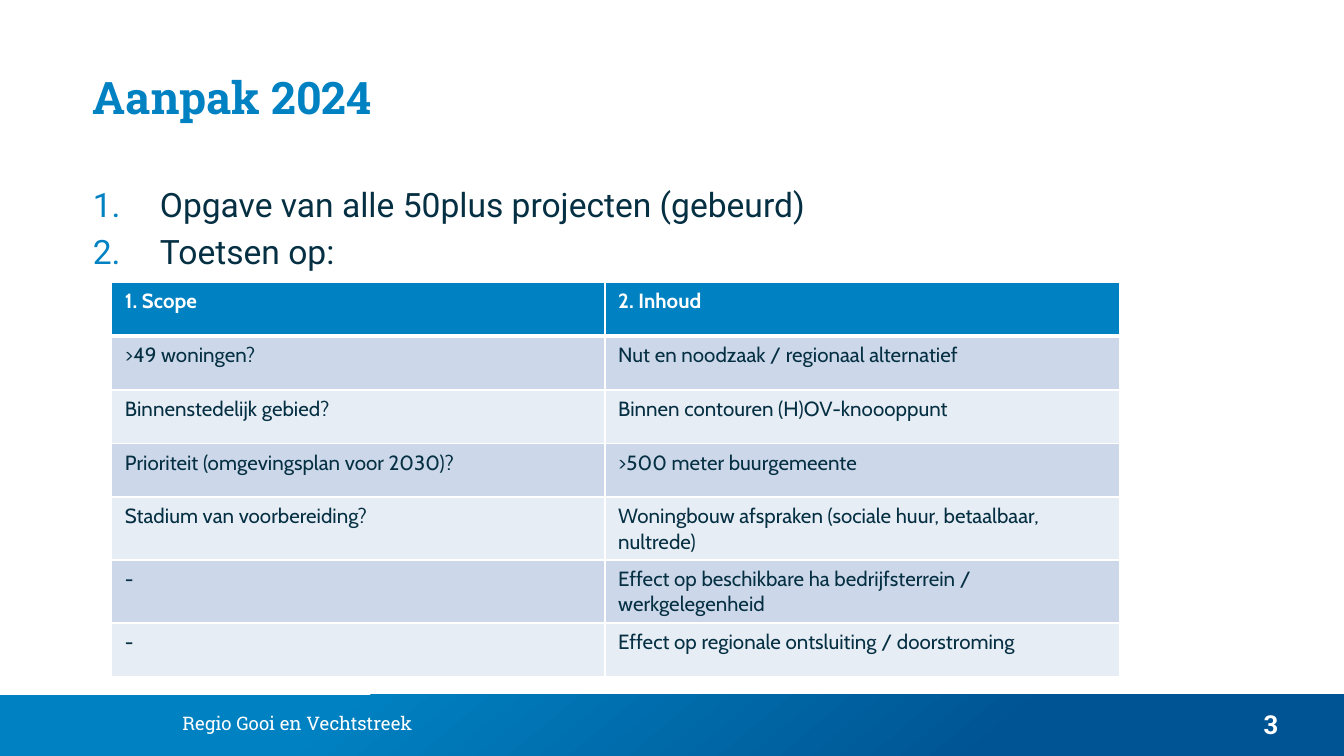
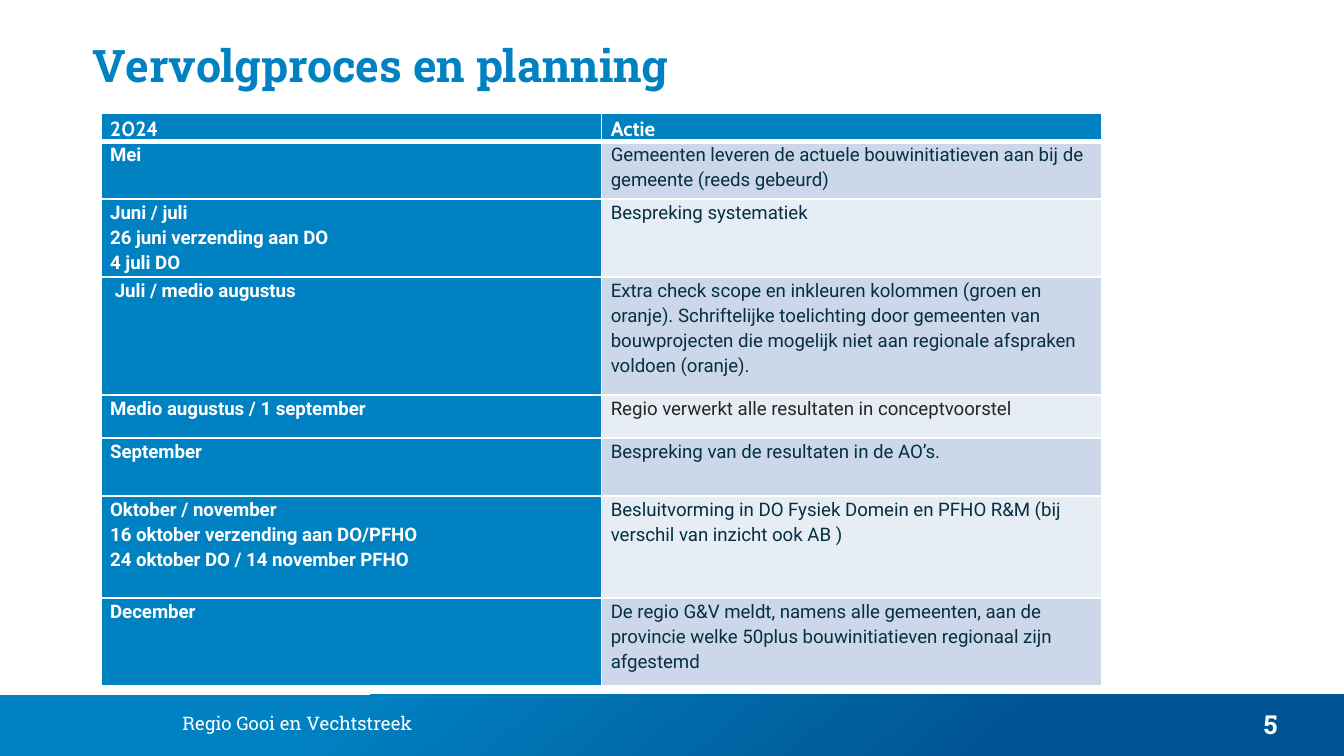
from lxml import etree
from pptx import Presentation
from pptx import util as u
from pptx.dml.color import RGBColor
from pptx.enum import shapes, text
from pptx.oxml import ns

BLUE = RGBColor(0x00, 0x82, 0xC2)
DEEP_BLUE = RGBColor(0x00, 0x54, 0x93)
INK = RGBColor(0x05, 0x2F, 0x42)
CHARCOAL = RGBColor(0x26, 0x26, 0x26)
WHITE = RGBColor(0xFF, 0xFF, 0xFF)
ROW_DARK = RGBColor(0xCC, 0xD8, 0xE9)
ROW_LIGHT = RGBColor(0xE7, 0xED, 0xF4)
SLAB, SANS, TABLE_FONT = "Roboto Slab", "Roboto", "Cabin"
TITLE_ONLY, TITLE_AND_BODY = 5, 1
PAGE_WIDTH = 10
PAGE_HEIGHT = PAGE_WIDTH * 9 / 16
BAND_TOP = 5.17

CRITERIA = [
    ("1. Scope", "2. Inhoud"),
    (">49 woningen?", "Nut en noodzaak / regionaal alternatief"),
    ("Binnenstedelijk gebied?", "Binnen contouren (H)OV-knoooppunt"),
    ("Prioriteit (omgevingsplan voor 2030)?", ">500 meter buurgemeente"),
    ("Stadium van voorbereiding?",
     "Woningbouw afspraken (sociale huur, betaalbaar, nultrede)"),
    ("-", "Effect op beschikbare ha bedrijfsterrein / werkgelegenheid"),
    ("-", "Effect op regionale ontsluiting / doorstroming"),
]
PLANNING = [
    ("2024", "Actie"),
    ("Mei", "Gemeenten leveren de actuele bouwinitiatieven aan bij de gemeente "
            "(reeds gebeurd)"),
    ("Juni / juli\n26 juni verzending aan DO\n4 juli DO", "Bespreking systematiek"),
    (" Juli / medio augustus",
     "Extra check scope en inkleuren kolommen (groen en oranje). Schriftelijke "
     "toelichting door gemeenten van bouwprojecten die mogelijk niet aan regionale "
     "afspraken voldoen (oranje)."),
    ("Medio augustus / 1 september", "Regio verwerkt alle resultaten in conceptvoorstel"),
    ("September", "Bespreking van de resultaten in de AO’s."),
    ("Oktober / november\n16 oktober verzending aan DO/PFHO\n"
     "24 oktober DO / 14 november PFHO",
     "Besluitvorming in DO Fysiek Domein en PFHO R&M (bij verschil van inzicht ook AB )"),
    ("December", "De regio G&V meldt, namens alle gemeenten, aan de provincie welke "
                 "50plus bouwinitiatieven regionaal zijn afgestemd"),
]


def inches(box):
    return [u.Inches(length) for length in box]


def write(frame, content, size, font=SANS, color=INK, bold=False,
          align=text.PP_ALIGN.LEFT, spacing=None, gap=0, numbered=False):
    frame.word_wrap = True
    frame.text = content
    for index, paragraph in enumerate(frame.paragraphs):
        paragraph.alignment = align
        paragraph.line_spacing = spacing
        paragraph.space_before = u.Pt(gap if index else 0)
        if numbered:
            number(paragraph)
        paragraph.font.size = u.Pt(size)
        paragraph.font.name = font
        paragraph.font.bold = bold
        paragraph.font.color.rgb = color


def number(paragraph):
    props = paragraph._p.get_or_add_pPr()
    props.set("marL", str(u.Inches(0.5)))
    props.set("indent", str(-u.Inches(0.5)))
    tint = etree.SubElement(props, ns.qn("a:buClr"))
    etree.SubElement(tint, ns.qn("a:srgbClr"), val=str(BLUE))
    etree.SubElement(props, ns.qn("a:buFont"), typeface="+mj-lt")
    etree.SubElement(props, ns.qn("a:buAutoNum"), type="arabicPeriod")


def fill_placeholder(placeholder, box, content, **style):
    placeholder.left, placeholder.top, placeholder.width, placeholder.height = inches(box)
    frame = placeholder.text_frame
    frame.auto_size = text.MSO_AUTO_SIZE.NONE
    frame.vertical_anchor = text.MSO_ANCHOR.TOP
    write(frame, content, **style)


def add_label(slide, box, content, **style):
    write(slide.shapes.add_textbox(*inches(box)).text_frame, content, **style)


def add_footer(slide, box, page):
    left, top, width, height = box
    band = slide.shapes.add_shape(shapes.MSO_SHAPE.RECTANGLE, *inches(box))
    band.shadow.inherit = False
    band.line.fill.background()
    band.fill.gradient()
    band.fill.gradient_angle = 310
    stops = ((0.24, BLUE), (0.75, DEEP_BLUE))
    for stop, (position, color) in zip(band.fill.gradient_stops, stops):
        stop.position = position
        stop.color.rgb = color
    add_label(slide, (left + width - 0.98, top + 0.05, 0.87, 0.35), page, size=14,
              font=SLAB, color=WHITE, bold=True, align=text.PP_ALIGN.CENTER)
    add_label(slide, (left + 1.26, top + 0.08, 3.07, 0.35), "Regio Gooi en Vechtstreek",
              size=10, font=SLAB, color=WHITE)


def add_borders(cell, row):
    props = cell._tc.get_or_add_tcPr()
    weights = {"L": 1, "R": 1, "T": 3 if row == 1 else 1, "B": 3 if row == 0 else 1}
    for side, weight in weights.items():
        edge = etree.SubElement(props, ns.qn("a:ln" + side), w=str(u.Pt(weight)))
        paint = etree.SubElement(edge, ns.qn("a:solidFill"))
        etree.SubElement(paint, ns.qn("a:srgbClr"), val=str(WHITE))


def add_grid(slide, corner, widths, heights, entries, size, font, margins=(0.1, 0.05),
             spacing=None, blue_column=False, tints=None):
    box = (*corner, sum(widths), sum(heights))
    grid = slide.shapes.add_table(len(heights), len(widths), *inches(box)).table
    for column, width in zip(grid.columns, widths):
        column.width = u.Inches(width)
    side, edge = inches(margins)
    for row, (height, labels) in enumerate(zip(heights, entries)):
        grid.rows[row].height = u.Inches(height)
        for col, label in enumerate(labels):
            cell = grid.cell(row, col)
            cell.margin_left = cell.margin_right = side
            cell.margin_top = cell.margin_bottom = edge
            heading = row == 0 or (blue_column and col == 0)
            color = WHITE if heading else (tints or {}).get((row, col), INK)
            write(cell.text_frame, label, size=size if row else 11,
                  font=font if row else TABLE_FONT, color=color,
                  bold=heading, spacing=spacing)
            add_borders(cell, row)
            cell.fill.solid()
            cell.fill.fore_color.rgb = BLUE if heading else ROW_DARK if row % 2 else ROW_LIGHT


def start_slide(deck, layout, title, title_box, page):
    slide = deck.slides.add_slide(deck.slide_layouts[layout])
    add_footer(slide, (0, BAND_TOP, PAGE_WIDTH, PAGE_HEIGHT - BAND_TOP), page)
    fill_placeholder(slide.shapes.title, title_box, title,
                     size=24, font=SLAB, color=BLUE, bold=True)
    return slide


def add_approach(deck):
    slide = start_slide(deck, TITLE_AND_BODY, "Aanpak 2024", (0.59, 0.47, 8.82, 0.59), "3")
    fill_placeholder(slide.placeholders[1], (0.59, 1.32, 8.82, 3.7),
                     "Opgave van alle 50plus projecten (gebeurd)\nToetsen op:",
                     size=18, gap=3.6, numbered=True)
    add_grid(slide, (0.83, 2.1), (3.67, 3.83), [0.4] * 4 + [0.46] * 2 + [0.4],
             CRITERIA, size=11, font=TABLE_FONT)


def add_planning(deck):
    slide = start_slide(deck, TITLE_ONLY, "Vervolgproces en planning",
                        (0.59, 0.23, 8.82, 0.7), "5")
    add_grid(slide, (0.75, 0.84), [7.45 / 2] * 2,
             (0.21, 0.43, 0.58, 0.88, 0.32, 0.43, 0.76, 0.65), PLANNING,
             size=10, font=SANS, margins=(0.07, 0), spacing=1.15, blue_column=True,
             tints={(4, 1): CHARCOAL})


def main():
    deck = Presentation()
    deck.slide_width, deck.slide_height = inches((PAGE_WIDTH, PAGE_HEIGHT))
    add_approach(deck)
    add_planning(deck)
    deck.save("out.pptx")


if __name__ == "__main__":
    main()
